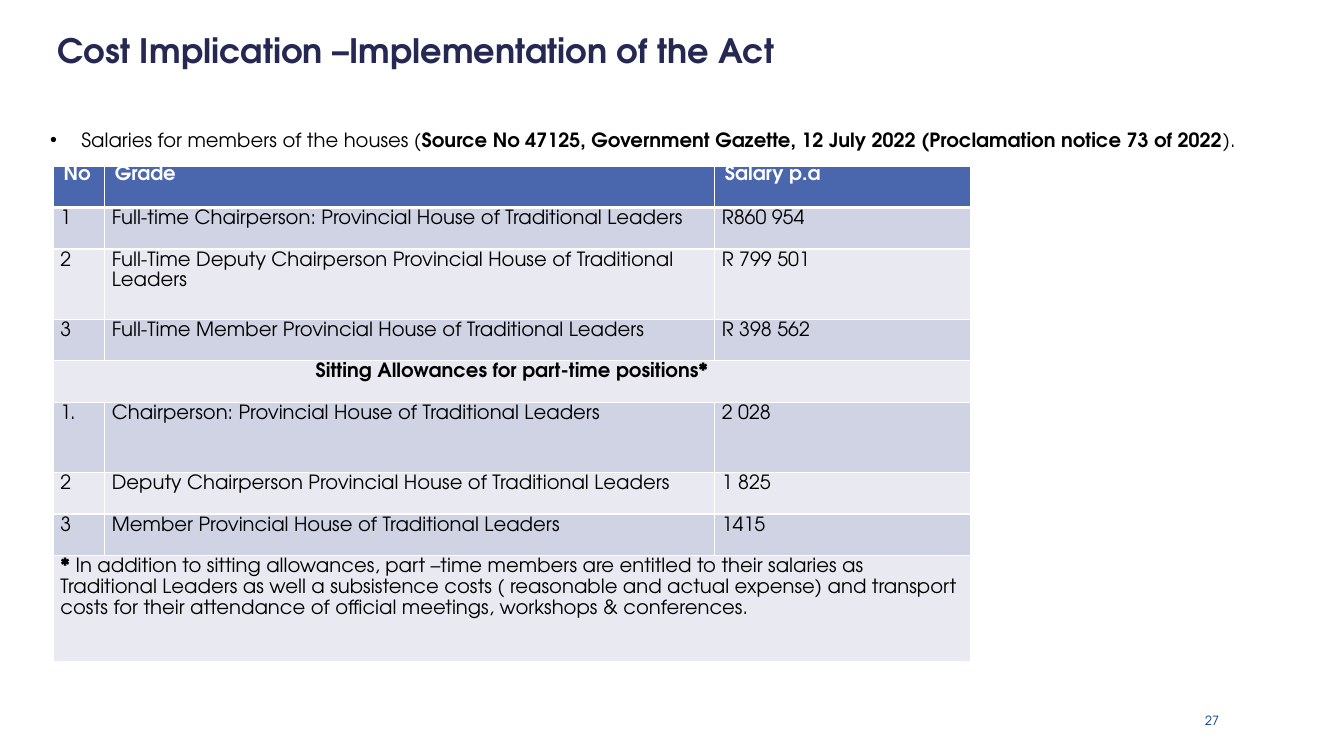
from lxml.etree import SubElement
from pptx import Presentation
from pptx.dml.color import RGBColor
from pptx.enum.text import MSO_ANCHOR, PP_ALIGN
from pptx.oxml.ns import qn
from pptx.util import Inches, Pt

FONT = "TeX Gyre Adventor"
NAVY = RGBColor(0x24, 0x28, 0x52)
BLUE = RGBColor(0x00, 0x33, 0x99)
HEADER_BLUE = RGBColor(0x4A, 0x66, 0xAC)
DARK_BAND = RGBColor(0xD0, 0xD3, 0xE3)
LIGHT_BAND = RGBColor(0xE9, 0xEA, 0xF1)
BLACK = RGBColor(0, 0, 0)
WHITE = RGBColor(0xFF, 0xFF, 0xFF)

COLUMN_WIDTHS = (0.51, 6.05, 2.54)
ROW = 0.41
DOUBLE_ROW = 0.7
NOTE_ROW = 1.05
SALARY_ROWS = (
    (ROW, ("No", "Grade", "Salary p.a")),
    (ROW, ("1", "Full-time Chairperson: Provincial House of Traditional Leaders", "R860 954")),
    (DOUBLE_ROW, ("2", "Full-Time Deputy Chairperson Provincial House of Traditional Leaders", "R 799 501")),
    (ROW, ("3", "Full-Time Member Provincial House of Traditional Leaders", "R 398 562")),
    (ROW, ("Sitting Allowances for part-time positions*",)),
    (DOUBLE_ROW, ("1.", "Chairperson: Provincial House of Traditional Leaders", "2 028")),
    (ROW, ("2", "Deputy Chairperson Provincial House of Traditional Leaders", "1 825")),
    (ROW, ("3", "Member Provincial House of Traditional Leaders", "1415")),
    (NOTE_ROW, ("* In addition to sitting allowances, part –time members are entitled to their "
                "salaries as Traditional Leaders as well a subsistence costs ( reasonable and "
                "actual expense) and transport costs for their attendance of official meetings, "
                "workshops & conferences.",)),
)


def add_runs(paragraph, pieces, size, color):
    for text, bold in pieces:
        run = paragraph.add_run()
        run.text = text
        run.font.name = FONT
        run.font.size = Pt(size)
        run.font.bold = bold
        run.font.color.rgb = color


def add_text(slide, box, pieces, size, color, margins, anchor=MSO_ANCHOR.MIDDLE):
    shape = slide.shapes.add_textbox(*map(Inches, box))
    frame = shape.text_frame
    frame.word_wrap = True
    frame.vertical_anchor = anchor
    frame.margin_left, frame.margin_top, frame.margin_right, frame.margin_bottom = map(Inches, margins)
    paragraph = frame.paragraphs[0]
    add_runs(paragraph, pieces, size, color)
    return paragraph


def add_bullet(paragraph, indent):
    properties = paragraph._p.get_or_add_pPr()
    properties.set("marL", str(Inches(indent)))
    properties.set("indent", str(-Inches(indent)))
    SubElement(properties, qn("a:buFont"), typeface="Arial")
    SubElement(properties, qn("a:buChar"), char="•")


def set_borders(cell, widths):
    properties = cell._tc.get_or_add_tcPr()
    for position, (side, width) in enumerate(zip("LRTB", widths)):
        line = SubElement(properties, qn(f"a:ln{side}"), w=str(Pt(width)))
        fill = SubElement(line, qn("a:solidFill"))
        SubElement(fill, qn("a:srgbClr"), val=str(WHITE))
        properties.remove(line)
        properties.insert(position, line)


def fill_cell(cell, text, is_header, is_merged):
    paragraph = cell.text_frame.paragraphs[0]
    cell.margin_left = cell.margin_right = Inches(0.1 if is_header else 0.07)
    cell.margin_top = cell.margin_bottom = 0
    if not is_header:
        paragraph.line_spacing = 1.15
    if text.startswith("*"):
        pieces = ((text[0], True), (text[1:], False))
    else:
        pieces = ((text, is_header or is_merged),)
        if is_merged:
            paragraph.alignment = PP_ALIGN.CENTER
    add_runs(paragraph, pieces, 14, WHITE if is_header else BLACK)


def add_salary_table(slide, left, top):
    height = sum(row_height for row_height, _ in SALARY_ROWS)
    table = slide.shapes.add_table(
        len(SALARY_ROWS), len(COLUMN_WIDTHS), Inches(left), Inches(top),
        Inches(sum(COLUMN_WIDTHS)), Inches(height)).table
    for column, width in zip(table.columns, COLUMN_WIDTHS):
        column.width = Inches(width)
    for index, (row_height, texts) in enumerate(SALARY_ROWS):
        table.rows[index].height = Inches(row_height)
        cells = [table.cell(index, column) for column in range(len(COLUMN_WIDTHS))]
        is_header = index == 0
        is_merged = len(texts) == 1
        band = HEADER_BLUE if is_header else (LIGHT_BAND, DARK_BAND)[index % 2]
        for cell in cells:
            cell.fill.solid()
            cell.fill.fore_color.rgb = band
            set_borders(cell, (1, 1, 3 if index == 1 else 1, 3 if is_header else 1))
        if is_merged:
            cells[0].merge(cells[-1])
        for cell, text in zip(cells, texts):
            fill_cell(cell, text, is_header, is_merged)


def main():
    presentation = Presentation()
    presentation.slide_width = Inches(13.33)
    presentation.slide_height = Inches(7.5)
    slide = presentation.slides.add_slide(presentation.slide_layouts[6])

    add_text(slide, (0.4, 0.19, 12.54, 0.61),
             (("Cost Implication –Implementation of the Act", True),),
             24, NAVY, (0.17, 0.08, 0.08, 0.08))
    page_number = add_text(slide, (11.34, 6.98, 0.75, 0.25), (("27", False),),
                           9, BLUE, (0.08, 0.08, 0, 0))
    page_number.alignment = PP_ALIGN.RIGHT
    source = add_text(
        slide, (0.4, 1.1, 12.93, 0.41),
        (("Salaries for members of the houses (", False),
         ("Source No 47125, Government Gazette, 12 July 2022 (Proclamation notice 73 of 2022", True),
         (").", False)),
        14, BLACK, (0.1, 0.05, 0.1, 0.05), MSO_ANCHOR.TOP)
    source.line_spacing = 1.5
    add_bullet(source, 0.31)
    add_salary_table(slide, 0.53, 1.65)

    presentation.save("out.pptx")


if __name__ == "__main__":
    main()
